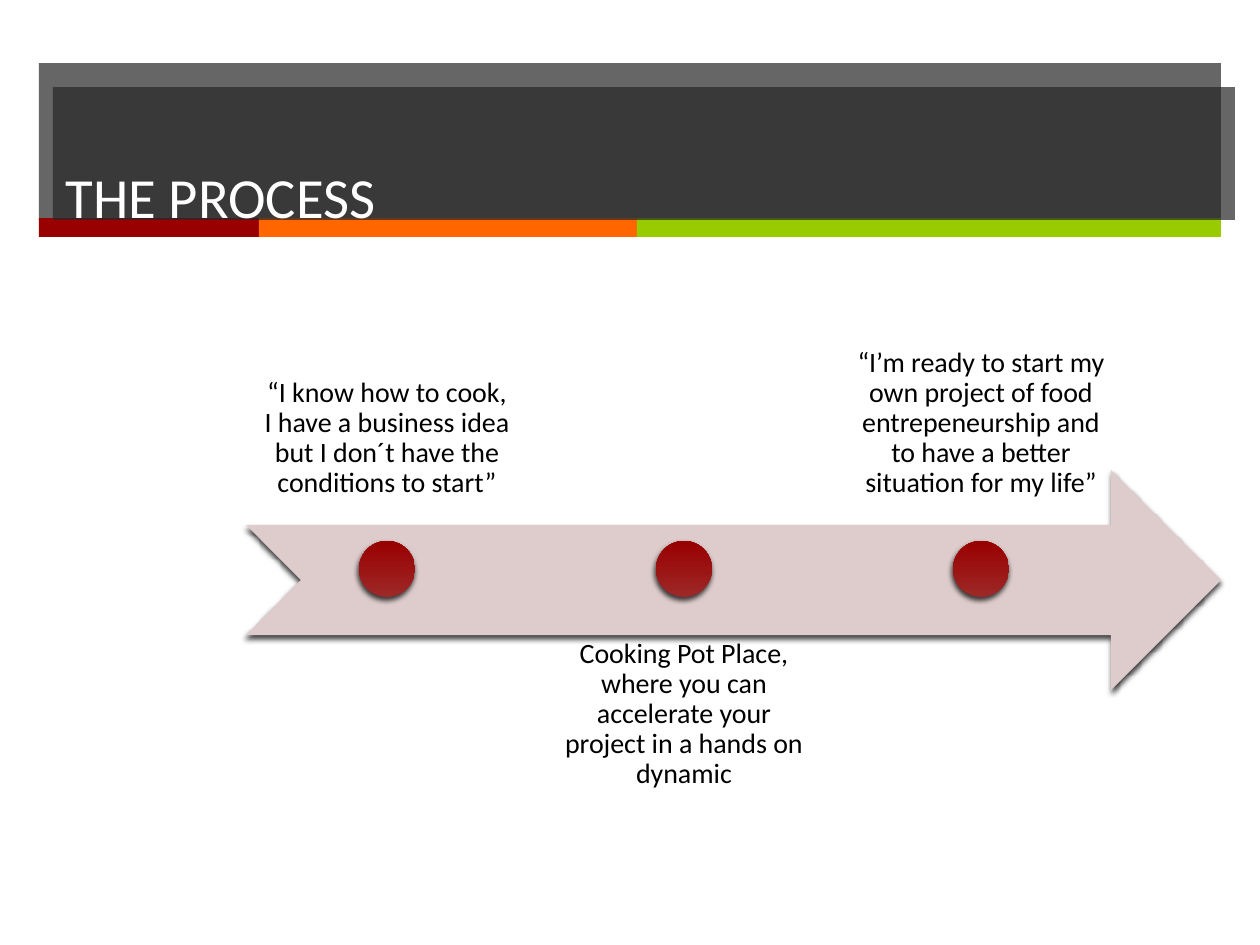
from lxml import etree
from pptx import Presentation
from pptx.dml.color import RGBColor
from pptx.enum.shapes import MSO_SHAPE as Shape
from pptx.enum.text import MSO_ANCHOR as Anchor, MSO_AUTO_SIZE as AutoSize, PP_ALIGN as Align
from pptx.oxml.ns import qn
from pptx.util import Inches, Pt

SCALE = Inches(1) / 126
FONT = "Calibri"
COLORS = {
    "dark": "262626",
    "red": "990000",
    "light_red": "9D2828",
    "orange": "FF6600",
    "green": "99CC00",
    "arrow": "DECCCC",
    "black": "000000",
    "white": "FFFFFF",
}
STEPS = [
    "“I know how to cook, I have a business idea but I don´t have the conditions to start”",
    "Cooking Pot Place, where you can accelerate your project in a hands on dynamic",
    "“I’m ready to start my own project of food entrepeneurship and to have a better situation for my life”",
]


def px(n):
    return round(n * SCALE)


def rgb(name):
    return RGBColor.from_string(COLORS[name])


def set_fill(sp, color, alpha=None):
    sp.fill.solid()
    sp.fill.fore_color.rgb = rgb(color)
    if alpha:
        clr = sp.fill._xPr.find(qn("a:solidFill"))[0]
        etree.SubElement(clr, qn("a:alpha"), val=str(alpha * 1000))


def add_shape(slide, kind, x, y, w, h, color, alpha=None):
    sp = slide.shapes.add_shape(kind, px(x), px(y), px(w), px(h))
    sp.shadow.inherit = False
    sp.line.fill.background()
    set_fill(sp, color, alpha)
    return sp


def add_shadow(sp):
    effects = sp._element.spPr.find(qn("a:effectLst"))
    shadow = etree.SubElement(
        effects, qn("a:outerShdw"), blurRad=str(Pt(3)), dist=str(Pt(2)),
        dir=str(110 * 60000), algn="ctr", rotWithShape="0")
    clr = etree.SubElement(shadow, qn("a:srgbClr"), val=COLORS["black"])
    etree.SubElement(clr, qn("a:alpha"), val="75000")


def format_text(p, size, color, align):
    p.alignment = align
    p.font.name = FONT
    p.font.size = Pt(size)
    p.font.color.rgb = rgb(color)


def add_header(slide, x, y, w, h):
    bar_h = 19
    add_shape(slide, Shape.RECTANGLE, x, y, w, h - bar_h + 2, "dark", 70)
    left = x
    for color, width in (("red", 220), ("orange", 378), ("green", w - 598)):
        add_shape(slide, Shape.RECTANGLE, left, y + h - bar_h, width, bar_h, color)
        left += width

    title = slide.shapes.title
    title.left, title.top = px(x + 14), px(y + 24)
    title.width, title.height = px(w), px(133)
    set_fill(title, "dark", 70)
    slide.shapes._spTree.append(title._element)
    tf = title.text_frame
    tf.auto_size = AutoSize.NONE
    tf.vertical_anchor = Anchor.TOP
    tf.margin_top, tf.margin_bottom = px(75), 0
    tf.text = "THE PROCESS"
    format_text(tf.paragraphs[0], 32.4, "white", Align.LEFT)


def add_step(slide, x, y, w, h, text, anchor):
    tb = slide.shapes.add_textbox(px(x), px(y), px(w), px(h))
    tf = tb.text_frame
    tf.word_wrap = True
    tf.vertical_anchor = anchor
    tf.margin_left = tf.margin_right = tf.margin_top = tf.margin_bottom = px(15)
    tf.text = text
    p = tf.paragraphs[0]
    format_text(p, 16, "black", Align.CENTER)
    p.line_spacing = 0.9


def add_dot(slide, x, y, d):
    dot = add_shape(slide, Shape.OVAL, x, y, d, d, "red")
    dot.fill.gradient()
    dot.fill.gradient_angle = 90
    for stop, color in zip(dot.fill.gradient_stops, ("light_red", "red")):
        stop.color.rgb = rgb(color)
    add_shadow(dot)


def add_timeline(slide, x, y, w, h):
    row_h = h * 2 // 5
    arrow_y = y + row_h - row_h // 5
    step_w, pitch, dot_d = 282, 297, 56
    arrow = add_shape(slide, Shape.NOTCHED_RIGHT_ARROW, x, arrow_y, w, row_h, "arrow")
    add_shadow(arrow)
    for i, text in enumerate(STEPS):
        left = x + i * pitch
        above = i % 2 == 0
        top = y if above else y + h - row_h
        add_step(slide, left, top, step_w, row_h, text, Anchor.BOTTOM if above else Anchor.TOP)
        add_dot(slide, left + (step_w - dot_d) // 2, y + (h - dot_d) // 2, dot_d)


def main():
    prs = Presentation()
    prs.slide_width, prs.slide_height = Inches(10), Inches(7.5)
    slide = prs.slides.add_slide(prs.slide_layouts[5])
    add_header(slide, 39, 63, 1182, 174)
    add_timeline(slide, 246, 294, 975, 550)
    prs.save("out.pptx")


if __name__ == "__main__":
    main()
